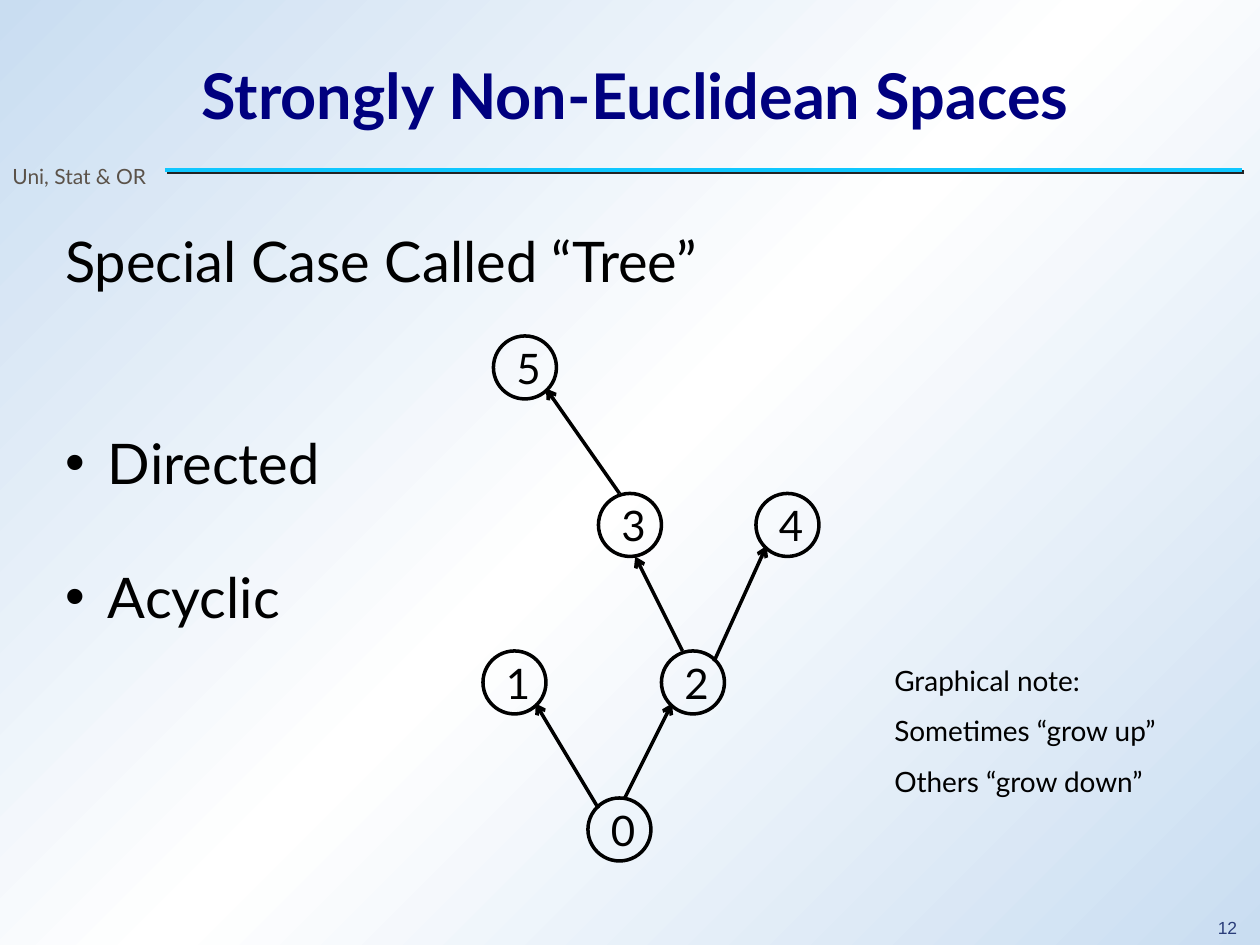
from copy import deepcopy
from dataclasses import dataclass

from lxml.etree import SubElement
from pptx import Presentation
from pptx.dml.color import RGBColor
from pptx.enum.shapes import MSO_CONNECTOR as Connector, MSO_SHAPE as Shape
from pptx.enum.text import MSO_ANCHOR as Anchor, MSO_AUTO_SIZE as AutoSize, PP_ALIGN as Align
from pptx.oxml.ns import qn
from pptx.util import Inches, Pt

CELLS_PER_INCH = 12


@dataclass(frozen=True)
class Theme:
    """Colours, fonts and type sizes of the slide."""
    edge: str = "C9DDF1"
    middle: str = "FFFFFF"
    ink: str = "000000"
    heading: str = "00007F"
    rule: str = "0FC7FF"
    rule_shadow: str = "232323"
    affiliation: str = "5B5249"
    number: str = "2A3D7A"
    font: str = "Lato"
    number_font: str = "Arial"
    title_size: int = 36
    body_size: int = 32
    label_size: int = 24
    note_size: int = 16
    small_size: int = 12
    number_size: int = 10
    stroke: float = 2
    rule_width: float = 2.25


def cells(*values):
    """Turn grid columns or rows into lengths."""
    return [Inches(value / CELLS_PER_INCH) for value in values]


def write(paragraph, text, *, size, color, font, bold=False, line=1.0, before=0, bullet=None):
    """Put formatted text into a paragraph."""
    paragraph.alignment = Align.LEFT
    paragraph.line_spacing = line
    paragraph.space_before, paragraph.space_after = Pt(before), Pt(0)
    run = paragraph.add_run()
    run.text = text
    run.font.size, run.font.name, run.font.bold = Pt(size), font, bold
    run.font.color.rgb = RGBColor.from_string(color)
    properties = paragraph._p.get_or_add_pPr()
    hang = Inches(0.34) if bullet else 0
    properties.set("marL", str(hang))
    properties.set("indent", str(-hang))
    if bullet:
        SubElement(properties, qn("a:buFont"), typeface="Arial")
        SubElement(properties, qn("a:buChar"), char=bullet)
    else:
        SubElement(properties, qn("a:buNone"))


class SlideBuilder:
    """Draws elements on one slide, measured in grid cells."""

    def __init__(self, slide, theme):
        """Keep the slide and its style."""
        self.slide, self.theme = slide, theme

    def background(self):
        """Fill the slide with a diagonal gradient."""
        fill = self.slide.background.fill
        fill.gradient()
        fill.gradient_angle = 315
        first, second = fill.gradient_stops
        first.color.rgb = RGBColor.from_string(self.theme.edge)
        second.color.rgb = RGBColor.from_string(self.theme.middle)
        first.position, second.position = 0, 0.5
        stops = self.slide.element.find(".//" + qn("a:gsLst"))
        last = deepcopy(stops[0])
        last.set("pos", "100000")
        stops.append(last)

    def fill_frame(self, shape, items, anchor=Anchor.TOP, **style):
        """Write (text, extra format) items into a shape, one per paragraph."""
        style = {"color": self.theme.ink, "font": self.theme.font, **style}
        frame = shape.text_frame
        frame.word_wrap, frame.auto_size = True, AutoSize.NONE
        frame.vertical_anchor = anchor
        for index, (text, extra) in enumerate(items):
            paragraph = frame.add_paragraph() if index else frame.paragraphs[0]
            write(paragraph, text, **{**style, **extra})

    def placeholder(self, index, box, items, **style):
        """Move and fill one of the layout's placeholders."""
        shape = self.slide.placeholders[index]
        shape.left, shape.top, shape.width, shape.height = cells(*box)
        self.fill_frame(shape, items, **style)

    def text(self, box, *lines, **style):
        """Add a text box with one paragraph per line."""
        shape = self.slide.shapes.add_textbox(*cells(*box))
        self.fill_frame(shape, [(line, {}) for line in lines], **style)

    def node(self, label, column, row):
        """Add a circle with its label."""
        circle = self.slide.shapes.add_shape(Shape.OVAL, *cells(column, row, 6, 6))
        circle.shadow.inherit = False
        circle.fill.background()
        circle.line.color.rgb = RGBColor.from_string(self.theme.ink)
        circle.line.width = Pt(self.theme.stroke)
        self.text((column + 1, row, 5, 6), label, size=self.theme.label_size)

    def line(self, start, end, color, width):
        """Add a plain straight connector and return it with its effect list."""
        connector = self.slide.shapes.add_connector(Connector.STRAIGHT, *cells(*start, *end))
        connector.line.color.rgb = RGBColor.from_string(color)
        connector.line.width = Pt(width)
        return connector, SubElement(connector._element.spPr, qn("a:effectLst"))

    def arrow(self, start, end):
        """Add a tree edge with an open arrowhead."""
        connector, _ = self.line(start, end, self.theme.ink, self.theme.stroke)
        SubElement(connector.line._get_or_add_ln(), qn("a:tailEnd"), type="arrow")

    def rule(self, start, end):
        """Add the title rule with its offset shadow."""
        _, effects = self.line(start, end, self.theme.rule, self.theme.rule_width)
        shadow = SubElement(effects, qn("a:outerShdw"), dist=str(Pt(1.4)), dir="2700000")
        SubElement(shadow, qn("a:srgbClr"), val=self.theme.rule_shadow)


def main():
    """Build and save the slide."""
    theme = Theme()
    presentation = Presentation()
    presentation.slide_width, presentation.slide_height = cells(120, 90)
    builder = SlideBuilder(presentation.slides.add_slide(presentation.slide_layouts[1]), theme)
    builder.background()
    builder.rule((15.75, 16.2), (118.3, 16.2))
    builder.text((114.8, 87, 4.5, 3), "12", size=theme.number_size, color=theme.number,
                 font=theme.number_font, line=0.9)
    builder.text((0, 15, 16.2, 3.6), "Uni, Stat & OR", size=theme.small_size,
                 color=theme.affiliation)
    builder.placeholder(0, (18, 4, 98, 10), [("Strongly Non-Euclidean Spaces", {})],
                        anchor=Anchor.MIDDLE, size=theme.title_size, color=theme.heading, bold=True)

    blank = theme.body_size * 1.2
    builder.placeholder(1, (5, 21, 68, 40), [
        ("Special Case Called “Tree”", {}),
        ("Directed", {"bullet": "•", "before": 2 * blank}),
        ("Acyclic", {"bullet": "•", "before": blank}),
    ], size=theme.body_size)

    nodes = {"0": (56, 76), "4": (72, 47), "1": (46, 62),
             "3": (57, 47), "2": (63, 62), "5": (47, 32)}
    for label, corner in nodes.items():
        builder.node(label, *corner)

    edges = [((57, 77), (51, 67)), ((59, 47), (52, 37)), ((68, 63), (73, 52)),
             ((65, 62), (60.5, 53)), ((59.5, 76), (64, 67))]
    for start, end in edges:
        builder.arrow(start, end)

    builder.text((84, 61, 30.7, 15.1), "Graphical note:", "Sometimes “grow up”",
                 "Others “grow down”", size=theme.note_size, line=1.5)
    presentation.save("out.pptx")


if __name__ == "__main__":
    main()
